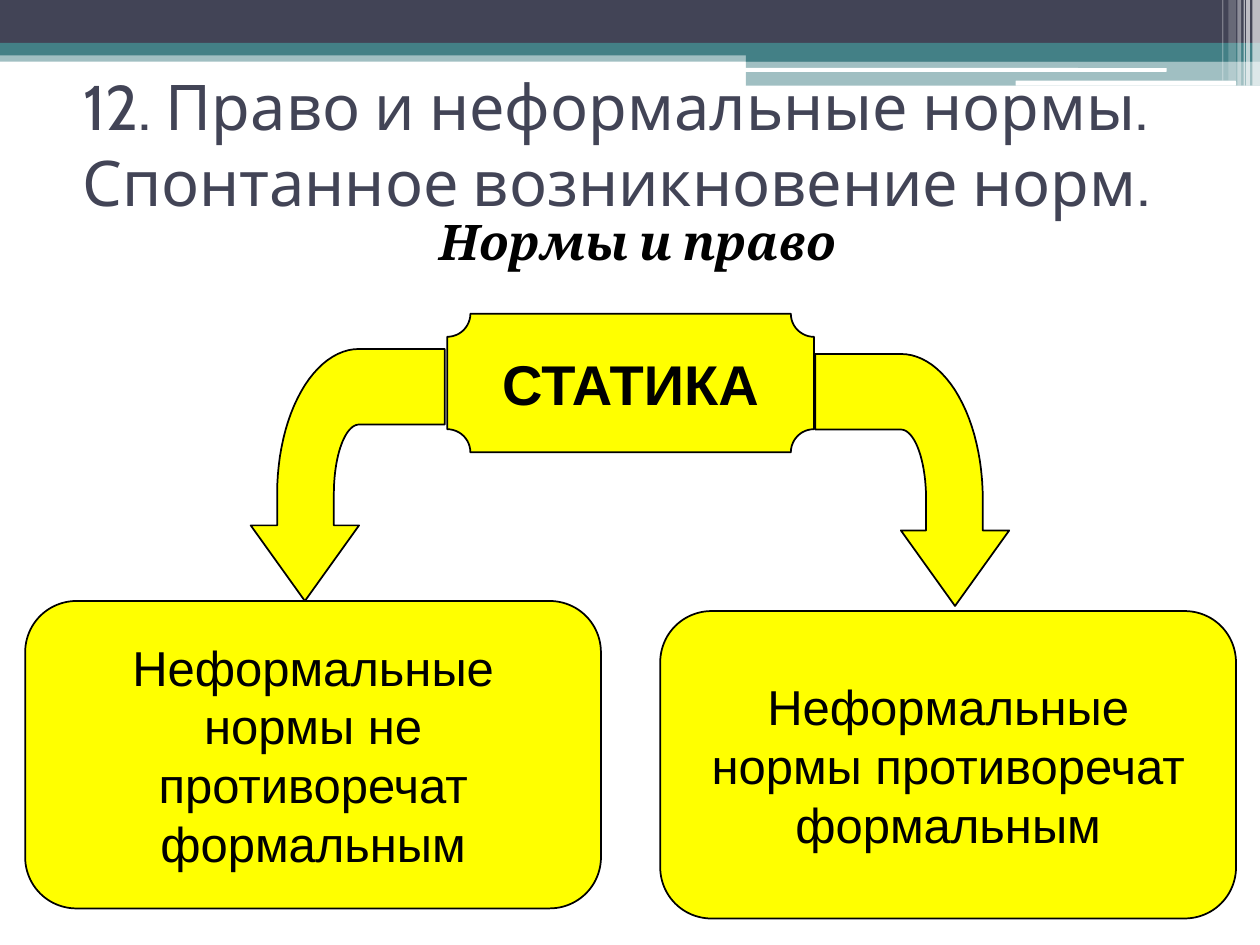
"""Builds a slide on law and informal norms: one concept branching into two cases."""
from math import cos, pi, sin

from lxml.etree import SubElement
from pptx import Presentation
from pptx.dml.color import RGBColor
from pptx.enum.shapes import MSO_SHAPE
from pptx.enum.text import MSO_ANCHOR, MSO_AUTO_SIZE, PP_ALIGN
from pptx.oxml.ns import qn
from pptx.util import Inches, Pt

THEME = {
    "navy": "424456", "teal": "438086", "white": "FFFFFF", "yellow": "FFFF00", "black": "000000",
    "title": ("Cabin", 36), "subtitle": ("Cambria", 28), "concept": ("Arial", 32), "case": ("Arial", 28),
}
TITLE = "12. Право и неформальные нормы. Спонтанное возникновение норм."
SUBTITLE = "Нормы и право"
CONCEPT = "СТАТИКА"
CASES = [
    ("Неформальные нормы не противоречат формальным", 0.2, 4.77, -1),
    ("Неформальные нормы противоречат формальным", 5.24, 4.85, 1),
]
BANDS = [
    ((0, 0.4, 10, 0.09), "teal", 50),
    ((0, 0, 10, 0.34), "navy", 100),
    ((0, 0.34, 10, 0.1), "teal", 100),
    ((5.92, 0.39, 4.08, 0.1), "teal", 100),
    ((5.92, 0.48, 4.08, 0.2), "teal", 50),
]
RULES = [(5.91, 0.54, 3.35, 0.03), (8.06, 0.64, 1.75, 0.04)]
STRIPES = [
    (9.94, 0.06, 0.68, 65), (9.89, 0.03, 0.68, 65), (9.87, 0.01, 0.68, 60),
    (9.82, 0.03, 0.68, 40), (9.75, 0.06, 0.64, 20), (9.7, 0.01, 0.64, 30),
]
CENTER_X = 5
ARC_STEPS = 24


def color(name):
    return RGBColor.from_string(THEME[name])


def paint(shape, fill, opacity=100, outlined=False):
    shape.shadow.inherit = False
    shape.fill.solid()
    shape.fill.fore_color.rgb = color(fill)
    if opacity < 100:
        tint = shape.fill._xPr.find(qn("a:solidFill"))[0]
        SubElement(tint, qn("a:alpha")).set("val", str(opacity * 1000))
    if outlined:
        shape.line.color.rgb = color("black")
        shape.line.width = Pt(1)
    else:
        shape.line.fill.background()


def add_block(slide, preset, box, fill, opacity=100, outlined=False):
    block = slide.shapes.add_shape(preset, *map(Inches, box))
    paint(block, fill, opacity, outlined)
    return block


def write(shape, text, style, ink="black", bold=False, italic=False, wrap=True, anchor=MSO_ANCHOR.MIDDLE):
    frame = shape.text_frame
    frame.auto_size = MSO_AUTO_SIZE.NONE
    frame.word_wrap = wrap
    frame.vertical_anchor = anchor
    paragraph = frame.paragraphs[0]
    paragraph.alignment = PP_ALIGN.CENTER
    run = paragraph.add_run()
    run.text = text
    run.font.name, size = THEME[style]
    run.font.size = Pt(size)
    run.font.bold, run.font.italic = bold, italic
    run.font.color.rgb = color(ink)
    return paragraph


def arc(center, radii, start, end):
    angles = [start + (end - start) * step / ARC_STEPS for step in range(ARC_STEPS + 1)]
    return [(center[0] + radii[0] * cos(a), center[1] - radii[1] * sin(a)) for a in angles]


def add_bent_arrow(slide, tip_y, side):
    bend = (2.15, tip_y - 0.85)
    head_y = tip_y - 0.6
    outline = [(2.58, tip_y), (3.01, head_y), (2.8, head_y)]
    outline += arc(bend, (0.65, 1.15), 0, pi / 2)
    outline += [(1.47, tip_y - 2), (1.47, tip_y - 1.4)]
    outline += arc(bend, (0.2, 0.55), pi / 2, 0)
    outline += [(2.35, head_y), (2.15, head_y)]
    points = [(Inches(CENTER_X + side * x), Inches(y)) for x, y in outline]
    builder = slide.shapes.build_freeform(*points[0])
    builder.add_line_segments(points[1:], close=True)
    paint(builder.convert_to_shape(), "yellow", outlined=True)


def place(slide, placeholder, box):
    placeholder.left, placeholder.top, placeholder.width, placeholder.height = map(Inches, box)
    slide.shapes._spTree.append(placeholder._element)


def main():
    deck = Presentation()
    deck.slide_width, deck.slide_height = Inches(10), Inches(7.5)
    slide = deck.slides.add_slide(deck.slide_layouts[1])
    title, subtitle = slide.placeholders

    for box, fill, opacity in BANDS:
        add_block(slide, MSO_SHAPE.RECTANGLE, box, fill, opacity)
    for box in RULES:
        add_block(slide, MSO_SHAPE.ROUNDED_RECTANGLE, box, "white")
    for left, width, height, opacity in STRIPES:
        add_block(slide, MSO_SHAPE.RECTANGLE, (left, 0, width, height), "white", opacity)

    concept = add_block(slide, MSO_SHAPE.PLAQUE, (3.55, 2.49, 2.91, 1.1), "yellow", outlined=True)
    write(concept, CONCEPT, "concept", bold=True, wrap=False)
    for text, left, top, side in CASES:
        add_bent_arrow(slide, 4.77 if side < 0 else 4.81, side)
        case = add_block(slide, MSO_SHAPE.ROUNDED_RECTANGLE, (left, top, 4.57, 2.44), "yellow", outlined=True)
        write(case, text, "case")

    place(slide, title, (0.39, 0.55, 9, 1.17))
    write(title, TITLE, "title", ink="navy")
    place(slide, subtitle, (0.5, 1.72, 9, 0.54))
    heading = write(subtitle, SUBTITLE, "subtitle", bold=True, italic=True, anchor=MSO_ANCHOR.TOP)
    heading.line_spacing = 0.8
    heading.space_before = Pt(12)
    properties = heading._p.get_or_add_pPr()
    properties.set("marL", str(Inches(0.4)))
    properties.set("indent", str(Inches(-0.28)))
    SubElement(properties, qn("a:buNone"))

    deck.save("out.pptx")


if __name__ == "__main__":
    main()
